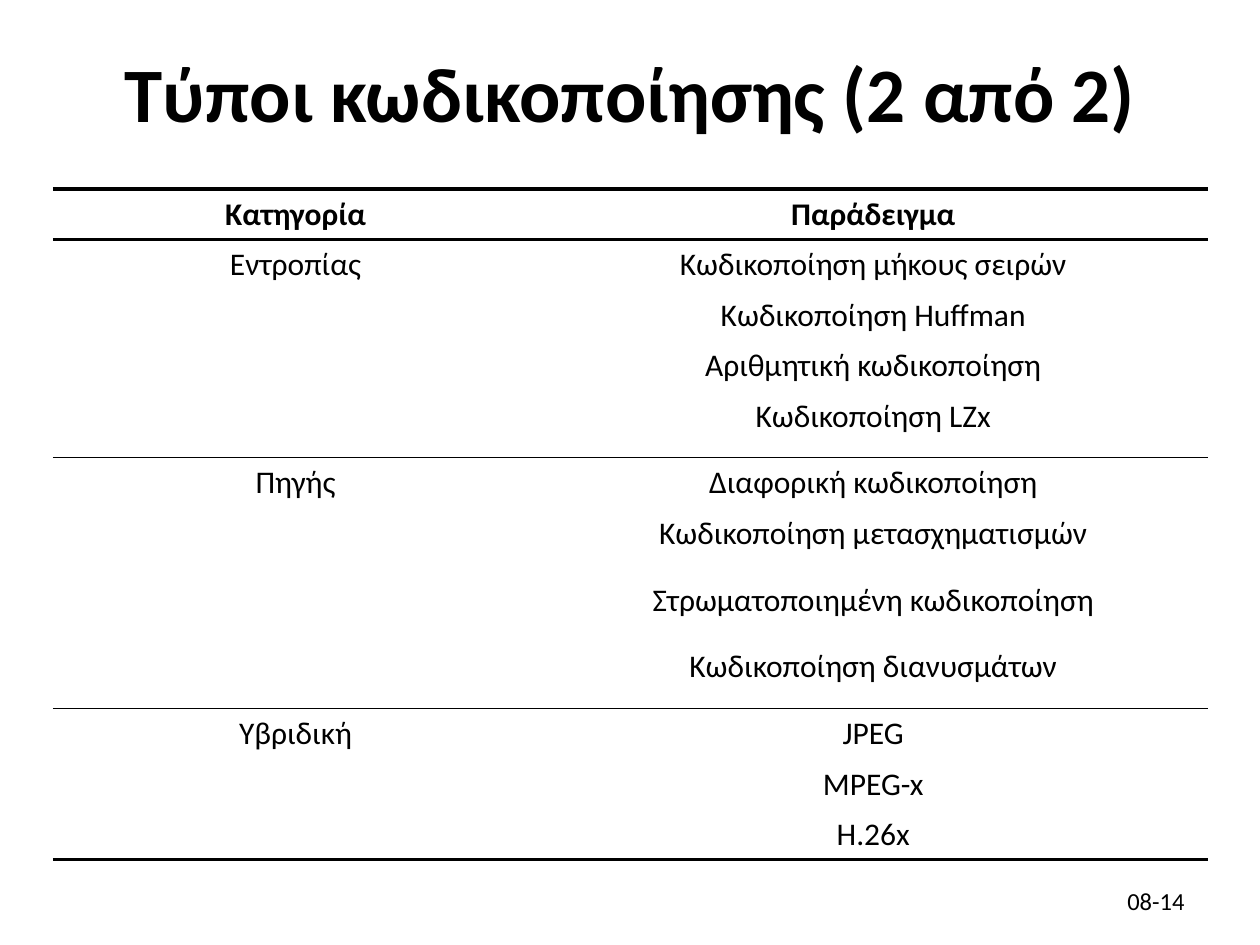
from dataclasses import dataclass

from lxml import etree
from pptx import Presentation
from pptx.dml.color import RGBColor
from pptx.enum.text import MSO_ANCHOR, PP_ALIGN
from pptx.oxml.ns import qn
from pptx.util import Emu, Inches, Pt

CENTER, RIGHT = PP_ALIGN.CENTER, PP_ALIGN.RIGHT
MIDDLE, TOP = MSO_ANCHOR.MIDDLE, MSO_ANCHOR.TOP

COLORS = {"ink": "000000", "paper": "FFFFFF"}
FONT = "Calibri"
SLIDE_WIDTH, SLIDE_HEIGHT = Inches(10), Inches(7.5)
BLANK_LAYOUT = 6

COLUMN_SHARES = (0.42, 0.58)
ROW_HEIGHT, TALL_ROW_HEIGHT = Inches(0.4), Inches(0.53)
HANGING_INDENT = Inches(0.38)
CELL_MARGINS = {
    "margin_left": Inches(0.1),
    "margin_right": Inches(0.1),
    "margin_top": Inches(0.05),
    "margin_bottom": Inches(0.05),
}
THICK, THIN, NO_LINE = 2, 1, 0


@dataclass(frozen=True)
class Area:
    """A rectangle given as shares of the slide's size."""
    left: float
    top: float
    width: float
    height: float

    def lengths(self) -> tuple[Emu, Emu, Emu, Emu]:
        return (
            Emu(round(self.left * SLIDE_WIDTH)),
            Emu(round(self.top * SLIDE_HEIGHT)),
            Emu(round(self.width * SLIDE_WIDTH)),
            Emu(round(self.height * SLIDE_HEIGHT)),
        )


@dataclass(frozen=True)
class Label:
    text: str
    area: Area
    size: int
    align: PP_ALIGN
    bold: bool = False


@dataclass(frozen=True)
class Group:
    """One category with its examples; tall_rows holds row numbers within it."""
    category: str
    examples: tuple[str, ...]
    rule_below: int
    tall_rows: tuple[int, ...] = ()
    bold: bool = False


@dataclass(frozen=True)
class Row:
    texts: tuple[str, str]
    height: Emu
    rule_above: int
    rule_below: int
    bold: bool


LABELS = (
    Label("Τύποι κωδικοποίησης (2 από 2)",
          Area(0.042, 0.016, 0.917, 0.161), 44, CENTER, bold=True),
    Label("08-14", Area(0.717, 0.927, 0.233, 0.053), 14, RIGHT),
)
TABLE_AREA = Area(0.042, 0.2, 0.917, 0.71)
GROUPS = (
    Group("Κατηγορία", ("Παράδειγμα",), THICK, bold=True),
    Group("Εντροπίας", (
        "Κωδικοποίηση μήκους σειρών",
        "Κωδικοποίηση Huffman",
        "Αριθμητική κωδικοποίηση",
        "Κωδικοποίηση LZx",
    ), THIN, tall_rows=(3,)),
    Group("Πηγής", (
        "Διαφορική κωδικοποίηση",
        "Κωδικοποίηση μετασχηματισμών",
        "Στρωματοποιημένη κωδικοποίηση",
        "Κωδικοποίηση διανυσμάτων",
    ), THIN, tall_rows=(1, 2, 3)),
    Group("Υβριδική", ("JPEG", "MPEG-x", "H.26x"), THICK),
)


def write_text(para, text: str, size: int, align: PP_ALIGN, bold: bool) -> None:
    para.alignment = align
    span = para.add_run()
    span.text = text
    for name, value in {"name": FONT, "size": Pt(size), "bold": bold}.items():
        setattr(span.font, name, value)
    span.font.color.rgb = RGBColor.from_string(COLORS["ink"])


def add_label(page, label: Label) -> None:
    frame = page.shapes.add_textbox(*label.area.lengths()).text_frame
    frame.word_wrap = True
    frame.vertical_anchor = MIDDLE
    write_text(frame.paragraphs[0], label.text, label.size, label.align, label.bold)


def rows_of(groups: tuple[Group, ...]) -> list[Row]:
    """Spread the groups over table rows, with rules only between groups."""
    rows = []
    rule_above = THICK
    for group in groups:
        last = len(group.examples) - 1
        for number, example in enumerate(group.examples):
            rows.append(Row(
                texts=(group.category if number == 0 else "", example),
                height=TALL_ROW_HEIGHT if number in group.tall_rows else ROW_HEIGHT,
                rule_above=rule_above if number == 0 else NO_LINE,
                rule_below=group.rule_below if number == last else NO_LINE,
                bold=group.bold,
            ))
        rule_above = group.rule_below
    return rows


def set_borders(cell, rule_above: int, rule_below: int) -> None:
    properties = cell._tc.get_or_add_tcPr()
    widths = {"a:lnL": NO_LINE, "a:lnR": NO_LINE, "a:lnT": rule_above, "a:lnB": rule_below}
    for tag, width in widths.items():
        line = etree.SubElement(properties, qn(tag), w=str(Pt(width)))
        if width == NO_LINE:
            etree.SubElement(line, qn("a:noFill"))
        else:
            fill = etree.SubElement(line, qn("a:solidFill"))
            etree.SubElement(fill, qn("a:srgbClr"), val=COLORS["ink"])


def fill_cell(cell, text: str, row: Row) -> None:
    set_borders(cell, row.rule_above, row.rule_below)
    cell.fill.background()
    cell.vertical_anchor = TOP
    for name, value in CELL_MARGINS.items():
        setattr(cell, name, value)
    para = cell.text_frame.paragraphs[0]
    if text:
        write_text(para, text, 18, CENTER, row.bold)
        indents = {"marL": HANGING_INDENT, "indent": -HANGING_INDENT}
        for name, value in indents.items():
            para._p.get_or_add_pPr().set(name, str(value))
    else:
        para.font.size = Pt(18)


def add_coding_table(page, groups: tuple[Group, ...], area: Area) -> None:
    rows = rows_of(groups)
    left, top, width, height = area.lengths()
    table = page.shapes.add_table(
        len(rows), len(COLUMN_SHARES), left, top, width, height).table
    table.first_row = table.horz_banding = False
    for column, share in zip(table.columns, COLUMN_SHARES):
        column.width = Emu(round(width * share))
    for table_row, row in zip(table.rows, rows):
        table_row.height = row.height
        for cell, text in zip(table_row.cells, row.texts):
            fill_cell(cell, text, row)


def main() -> None:
    deck = Presentation()
    deck.slide_width, deck.slide_height = SLIDE_WIDTH, SLIDE_HEIGHT
    page = deck.slides.add_slide(deck.slide_layouts[BLANK_LAYOUT])
    page.background.fill.solid()
    page.background.fill.fore_color.rgb = RGBColor.from_string(COLORS["paper"])
    title, page_number = LABELS
    add_label(page, title)
    add_coding_table(page, GROUPS, TABLE_AREA)
    add_label(page, page_number)
    deck.save("out.pptx")


if __name__ == "__main__":
    main()
